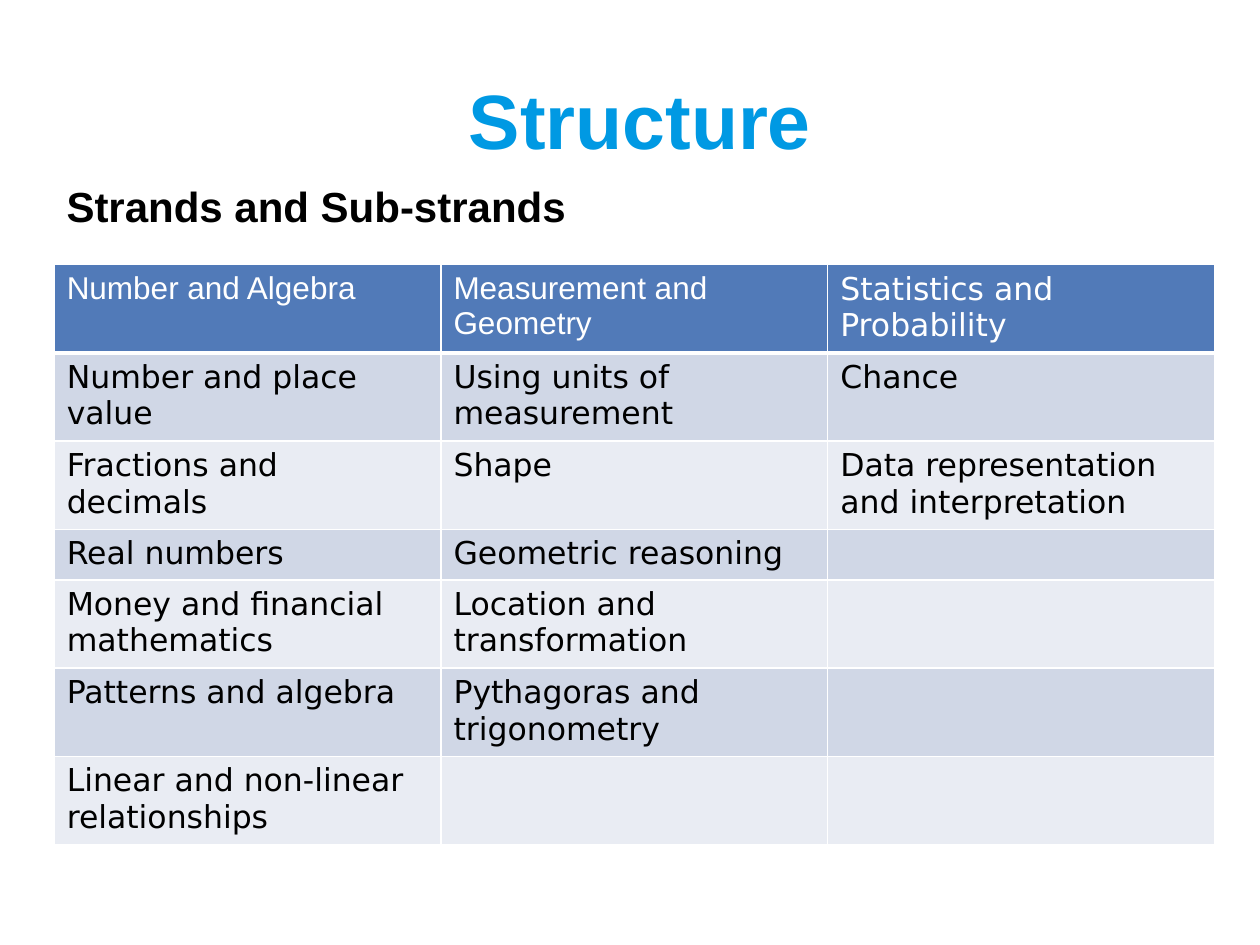
from typing import NamedTuple

from lxml.etree import SubElement
from pptx import Presentation
from pptx.dml.color import RGBColor
from pptx.enum.text import MSO_ANCHOR, PP_ALIGN
from pptx.oxml.ns import qn
from pptx.util import Inches, Pt

WIDE, HIGH = Inches(10), Inches(7.5)
WHITE, BLACK, BLUE = "FFFFFF", "000000", "0099E3"
HEAD, BANDS = "517AB8", ("D0D7E6", "E9ECF3")
SANS, DEJA = "Arial", "DejaVu Sans"


class Box(NamedTuple):
    left: float
    top: float
    width: float
    height: float

    def place(self) -> list[int]:
        sides = (WIDE, HIGH, WIDE, HIGH)
        return [round(percent * side / 100) for percent, side in zip(self, sides)]


class Strand(NamedTuple):
    name: str
    font: str
    topics: list[str]


STRANDS = [
    Strand("Number and Algebra", SANS, [
        "Number and place value", "Fractions and decimals", "Real numbers",
        "Money and financial mathematics", "Patterns and algebra",
        "Linear and non-linear relationships"]),
    Strand("Measurement and Geometry", SANS, [
        "Using units of measurement", "Shape", "Geometric reasoning",
        "Location and transformation", "Pythagoras and trigonometry"]),
    Strand("Statistics and Probability", DEJA, [
        "Chance", "Data representation and interpretation"]),
]
TALL, SHORT = 0.7, 0.4
ROWS = [TALL] * 3 + [SHORT] + [TALL] * 3


def paint(code: str) -> RGBColor:
    return RGBColor.from_string(code)


def write(frame, text: str, color: str, **style) -> None:
    frame.text = text
    font = frame.paragraphs[0].font
    for key, value in style.items():
        setattr(font, key, value)
    font.color.rgb = paint(color)


def edge(cell, side: str, width: float) -> None:
    line = SubElement(cell._tc.get_or_add_tcPr(), qn(f"a:ln{side}"), w=str(Pt(width)))
    fill = SubElement(line, qn("a:solidFill"))
    SubElement(fill, qn("a:srgbClr"), val=WHITE)


def draw_cell(cell, text: str, font: str, row: int) -> None:
    for side in "LRTB":
        thick = (row == 0 and side == "B") or (row == 1 and side == "T")
        edge(cell, side, 3 if thick else 1)
    cell.fill.solid()
    cell.fill.fore_color.rgb = paint(BANDS[(row - 1) % 2] if row else HEAD)
    write(cell.text_frame, text, BLACK if row else WHITE,
          name=font, size=Pt(18), bold=False)


def draw_table(slide, box: Box) -> None:
    table = slide.shapes.add_table(len(ROWS), len(STRANDS), *box.place()).table
    for row, height in zip(table.rows, ROWS):
        row.height = Inches(height)
    for col, strand in enumerate(STRANDS):
        draw_cell(table.cell(0, col), strand.name, strand.font, 0)
        for row in range(1, len(ROWS)):
            text = strand.topics[row - 1] if row <= len(strand.topics) else ""
            draw_cell(table.cell(row, col), text, DEJA, row)


def draw_title(slide, box: Box) -> None:
    title = slide.shapes.title
    title.left, title.top, title.width, title.height = box.place()
    frame = title.text_frame
    frame.vertical_anchor = MSO_ANCHOR.MIDDLE
    write(frame, "Structure", BLUE, name=SANS, size=Pt(44), bold=True)
    frame.paragraphs[0].alignment = PP_ALIGN.CENTER


def draw_label(slide, box: Box) -> None:
    frame = slide.shapes.add_textbox(*box.place()).text_frame
    frame.word_wrap = True
    write(frame, "Strands and Sub-strands", BLACK, name=SANS, size=Pt(24), bold=True)


def main() -> None:
    deck = Presentation()
    deck.slide_width, deck.slide_height = WIDE, HIGH
    slide = deck.slides.add_slide(deck.slide_layouts.get_by_name("Title Only"))
    draw_title(slide, Box(8.3, 7, 85, 11.2))
    draw_label(slide, Box(4.3, 18.5, 85, 6.7))
    draw_table(slide, Box(4.3, 28, 92.1, 61.3))
    deck.save("out.pptx")


if __name__ == "__main__":
    main()
